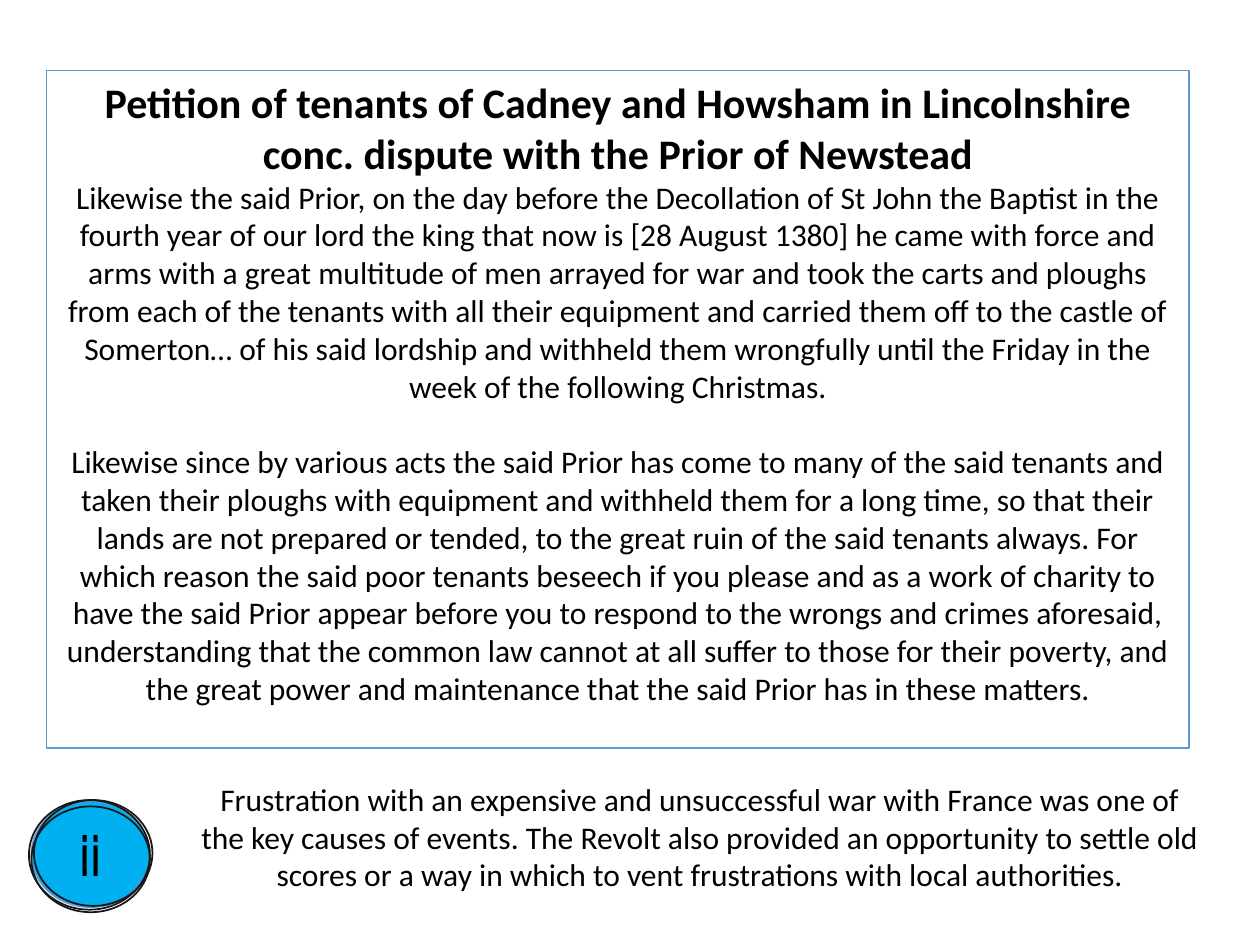
from typing import NamedTuple, Optional

from pptx import Presentation
from pptx.dml.color import RGBColor as RGB
from pptx.enum.shapes import MSO_SHAPE as Kind
from pptx.enum.text import MSO_ANCHOR as Anchor
from pptx.enum.text import MSO_AUTO_SIZE as Fit
from pptx.enum.text import PP_ALIGN as Align
from pptx.util import Inches, Pt

HUES = {"blue": "5B9BD5", "cyan": "00B0F0", "ink": "181717", "text": "000000"}
HEAD = {"name": "Calibri", "size": Pt(24), "bold": True}
BODY = {"name": "Calibri", "size": Pt(18), "bold": False}
MARK = {"name": "TeX Gyre Adventor", "size": Pt(32)}


class Box(NamedTuple):
    left: float
    top: float
    width: float
    height: float


class Form(NamedTuple):
    kind: Kind
    box: Box
    line: str
    fill: Optional[str] = None


class Para(NamedTuple):
    text: str
    font: dict
    gap: float = 0  # points above


FRAME = Form(Kind.RECTANGLE, Box(0.37, 0.56, 9.07, 5.38), "blue")
DISC = Form(Kind.OVAL, Box(0.25, 6.36, 0.94, 0.84), "blue", "cyan")
RINGS = [
    Form(Kind.OVAL, Box(0.23, 6.35, 0.96, 0.87), "ink"),
    Form(Kind.OVAL, Box(0.25, 6.4, 0.94, 0.84), "ink"),
    Form(Kind.OVAL, Box(0.27, 6.35, 0.94, 0.84), "ink"),
]

NOTE = [Para(
    "Frustration with an expensive and unsuccessful war with France was one of "
    "the key causes of events. The Revolt also provided an opportunity to settle "
    "old scores or a way in which to vent frustrations with local authorities.",
    BODY)]

PLEA = [
    Para("Petition of tenants of Cadney and Howsham in Lincolnshire conc. "
         "dispute with the Prior of Newstead", HEAD),
    Para("Likewise the said Prior, on the day before the Decollation of St John "
         "the Baptist in the fourth year of our lord the king that now is "
         "[28 August 1380] he came with force and arms with a great multitude of "
         "men arrayed for war and took the carts and ploughs from each of the "
         "tenants with all their equipment and carried them off to the castle of "
         "Somerton… of his said lordship and withheld them wrongfully until the "
         "Friday in the week of the following Christmas.", BODY),
    Para("Likewise since by various acts the said Prior has come to many of the "
         "said tenants and taken their ploughs with equipment and withheld them "
         "for a long time, so that their lands are not prepared or tended, to the "
         "great ruin of the said tenants always. For which reason the said poor "
         "tenants beseech if you please and as a work of charity to have the said "
         "Prior appear before you to respond to the wrongs and crimes aforesaid, "
         "understanding that the common law cannot at all suffer to those for "
         "their poverty, and the great power and maintenance that the said Prior "
         "has in these matters.", BODY, 21.6),
]


def hue(name: str) -> RGB:
    return RGB.from_string(HUES[name])


def draw(shapes, form: Form):
    shape = shapes.add_shape(form.kind, *map(Inches, form.box))
    shape.shadow.inherit = False
    if form.fill:
        shape.fill.solid()
        shape.fill.fore_color.rgb = hue(form.fill)
    else:
        shape.fill.background()
    shape.line.color.rgb = hue(form.line)
    shape.line.width = Pt(1)
    return shape


def write(frame, paras: list[Para]) -> None:
    for i, item in enumerate(paras):
        para = frame.add_paragraph() if i else frame.paragraphs[0]
        para.alignment = Align.CENTER
        para.space_before = Pt(item.gap)
        run = para.add_run()
        run.text = item.text
        for key, value in item.font.items():
            setattr(run.font, key, value)
        run.font.color.rgb = hue("text")


def block(shapes, box: Box, paras: list[Para]) -> None:
    frame = shapes.add_textbox(*map(Inches, box)).text_frame
    frame.word_wrap = True
    frame.auto_size = Fit.SHAPE_TO_FIT_TEXT
    write(frame, paras)


def main() -> None:
    deck = Presentation()
    deck.slide_width, deck.slide_height = Inches(10), Inches(7.5)
    shapes = deck.slides.add_slide(deck.slide_layouts[6]).shapes

    # Frame around the petition
    draw(shapes, FRAME)

    # Numbered badge with loose rings
    badge = shapes.add_group_shape().shapes
    disc = draw(badge, DISC).text_frame
    disc.vertical_anchor = Anchor.MIDDLE
    write(disc, [Para("ii", MARK)])
    for ring in RINGS:
        draw(badge, ring)

    # Comment and petition
    block(shapes, Box(1.47, 6.14, 8.17, 1.01), NOTE)
    block(shapes, Box(0.37, 0.56, 9.07, 5.45), PLEA)

    deck.save("out.pptx")


if __name__ == "__main__":
    main()
